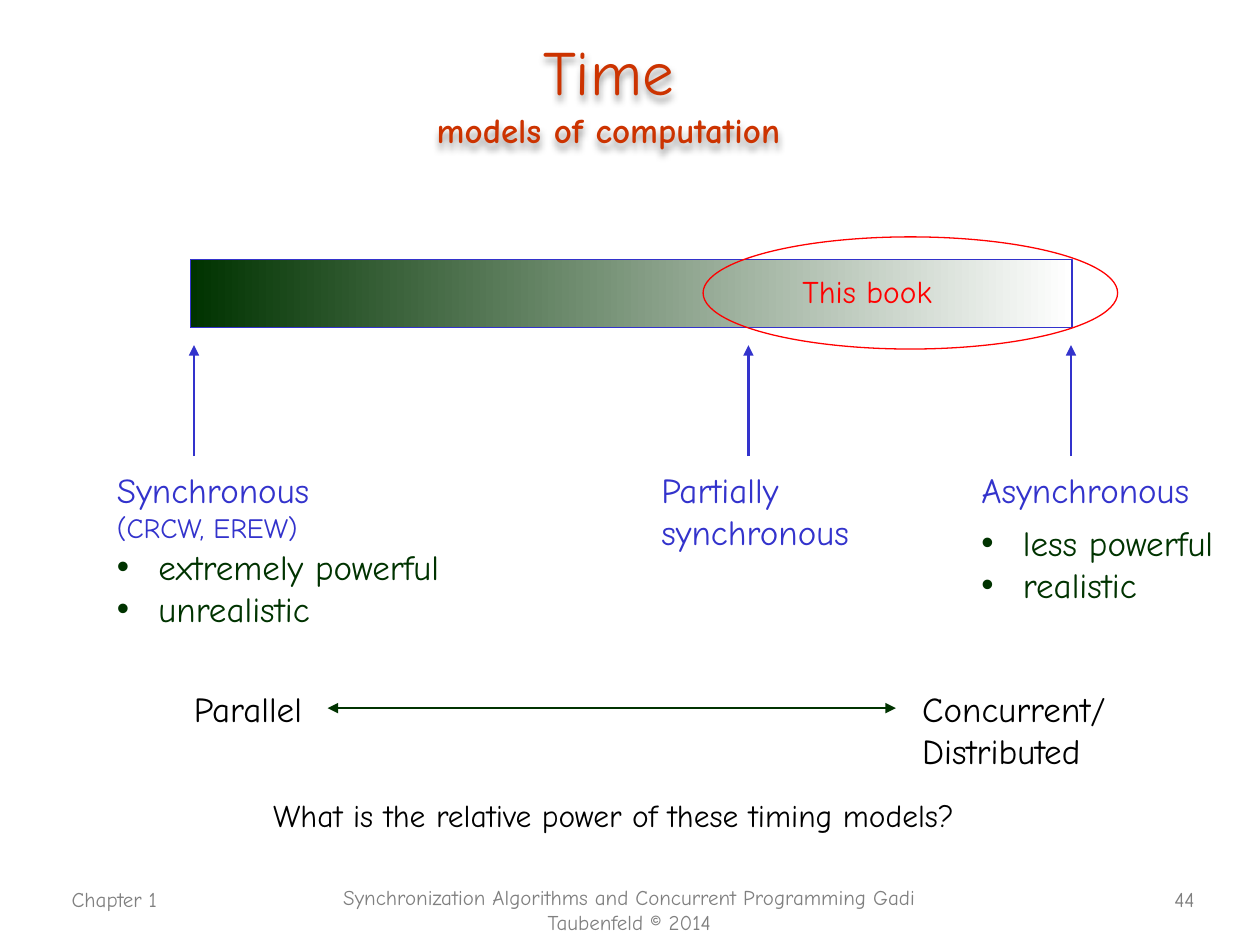
from lxml.etree import SubElement
from pptx import Presentation
from pptx.dml.color import RGBColor
from pptx.enum.shapes import MSO_CONNECTOR, MSO_SHAPE
from pptx.enum.text import MSO_ANCHOR, PP_ALIGN
from pptx.oxml.ns import qn
from pptx.util import Inches, Pt

FONT = "Comic Neue"
BLUE, GREEN, RED, ORANGE = "3333CC", "003300", "FF0000", "CC3300"
BLACK, GRAY, WHITE = "000000", "808080", "FFFFFF"


def color(hex_value):
    """Return the colour for a hex string."""
    return RGBColor.from_string(hex_value)


def add_bullet(paragraph):
    """Give a paragraph a hanging round bullet."""
    properties = paragraph._p.get_or_add_pPr()
    properties.set("marL", str(Inches(0.33)))
    properties.set("indent", str(-Inches(0.33)))
    SubElement(properties, qn("a:buFont"), typeface="Arial")
    SubElement(properties, qn("a:buChar"), char="•")


def style_run(run, size, hex_value, bold=False):
    """Set the font of a run."""
    run.font.name = FONT
    run.font.size = Pt(size)
    run.font.bold = bold
    run.font.color.rgb = color(hex_value)


def add_text(slide, text, left, top, width, height, size=20, hex_value=BLACK,
             align=PP_ALIGN.LEFT, anchor=MSO_ANCHOR.TOP, wrap=False,
             bullets=False, last_size=None):
    """Add a text box with one paragraph per line of text."""
    shape = slide.shapes.add_textbox(
        Inches(left), Inches(top), Inches(width), Inches(height))
    frame = shape.text_frame
    frame.word_wrap = wrap
    frame.vertical_anchor = anchor
    frame.text = text
    for paragraph in frame.paragraphs:
        paragraph.alignment = align
        style_run(paragraph.runs[0], size, hex_value)
        if bullets:
            add_bullet(paragraph)
    if last_size:
        frame.paragraphs[-1].runs[0].font.size = Pt(last_size)
    return shape


def add_title(slide, title, subtitle):
    """Add the two-line title with a soft shadow."""
    shape = add_text(slide, title, 0.58, 0.26, 8.5, 0.93, size=36,
                     hex_value=ORANGE, align=PP_ALIGN.CENTER,
                     anchor=MSO_ANCHOR.MIDDLE, wrap=True)
    paragraph = shape.text_frame.paragraphs[0]
    paragraph.add_line_break()
    run = paragraph.add_run()
    run.text = subtitle
    style_run(run, 20, ORANGE, bold=True)
    effects = SubElement(shape._element.spPr, qn("a:effectLst"))
    shadow = SubElement(effects, qn("a:outerShdw"), blurRad="50800",
                        dist="38100", dir="5400000", algn="t", rotWithShape="0")
    shade = SubElement(shadow, qn("a:srgbClr"), val=BLACK)
    SubElement(shade, qn("a:alpha"), val="40000")


def add_outline(slide, kind, left, top, width, height, hex_value):
    """Add an unfilled preset shape with a thin outline."""
    shape = slide.shapes.add_shape(
        kind, Inches(left), Inches(top), Inches(width), Inches(height))
    shape.shadow.inherit = False
    shape.fill.background()
    shape.line.color.rgb = color(hex_value)
    shape.line.width = Pt(0.75)
    return shape


def add_spectrum(slide):
    """Add the bar that fades from synchronous to asynchronous."""
    bar = add_outline(slide, MSO_SHAPE.RECTANGLE, 1.51, 2.06, 7, 0.54, BLUE)
    bar.fill.gradient()
    bar.fill.gradient_angle = 0
    for stop, position, hex_value in zip(
            bar.fill.gradient_stops, (0, 1), (GREEN, WHITE)):
        stop.position = position
        stop.color.rgb = color(hex_value)


def add_arrow(slide, start, end, hex_value, width, ends=("tailEnd",)):
    """Add a straight line with triangular arrowheads."""
    line = slide.shapes.add_connector(
        MSO_CONNECTOR.STRAIGHT, *map(Inches, start + end))
    line.line.color.rgb = color(hex_value)
    line.line.width = Pt(width)
    outline = line.line._get_or_add_ln()
    for name in ends:
        SubElement(outline, qn(f"a:{name}"), type="triangle")
    SubElement(line._element.spPr, qn("a:effectLst"))


def add_footer(slide):
    """Add the chapter, the book title and the slide number."""
    style = {"size": 12, "hex_value": GRAY, "wrap": True}
    add_text(slide, "44", 9.11, 6.99, 0.47, 0.3, align=PP_ALIGN.RIGHT, **style)
    add_text(slide, "Chapter 1", 0.47, 6.99, 2.08, 0.5, **style)
    add_text(slide, "Synchronization Algorithms and Concurrent Programming "
             "Gadi Taubenfeld © 2014", 2.58, 6.97, 4.83, 0.5,
             align=PP_ALIGN.CENTER, **style)


def main():
    """Build the slide on timing models."""
    presentation = Presentation()
    presentation.slide_width = Inches(10)
    presentation.slide_height = Inches(7.5)
    slide = presentation.slides.add_slide(presentation.slide_layouts[6])

    add_footer(slide)
    add_title(slide, "Time", "models of computation")
    add_spectrum(slide)
    for x in (1.54, 5.94, 8.5):
        add_arrow(slide, (x, 3.62), (x, 2.74), BLUE, 1.5)

    add_text(slide, "Synchronous\n(CRCW, EREW)", 0.83, 3.67, 1.84, 0.7,
             hex_value=BLUE, last_size=16)
    add_text(slide, "Partially\nsynchronous", 5.15, 3.67, 1.78, 0.77,
             hex_value=BLUE)
    add_text(slide, "Asynchronous", 7.69, 3.67, 1.98, 0.43, hex_value=BLUE)
    add_text(slide, "extremely powerful\nunrealistic", 0.83, 4.28, 2.93, 0.77,
             hex_value=GREEN, bullets=True)
    add_text(slide, "less powerful\nrealistic", 7.69, 4.09, 2.11, 0.77,
             hex_value=GREEN, bullets=True)

    add_text(slide, "Parallel", 1.44, 5.41, 1.15, 0.43)
    add_arrow(slide, (2.6, 5.62), (7.11, 5.62), GREEN, 0.75,
              ends=("headEnd", "tailEnd"))
    add_text(slide, "Concurrent/\nDistributed", 7.22, 5.41, 1.78, 0.77)
    add_text(slide, "What is the relative power of these timing models?",
             0.62, 6.14, 8.5, 0.65, size=18, align=PP_ALIGN.CENTER,
             anchor=MSO_ANCHOR.MIDDLE, wrap=True)

    add_outline(slide, MSO_SHAPE.OVAL, 5.58, 1.88, 3.29, 0.89, RED)
    add_text(slide, "This book", 6.27, 2.11, 1.33, 0.4, size=18, hex_value=RED)
    presentation.save("out.pptx")


if __name__ == "__main__":
    main()
